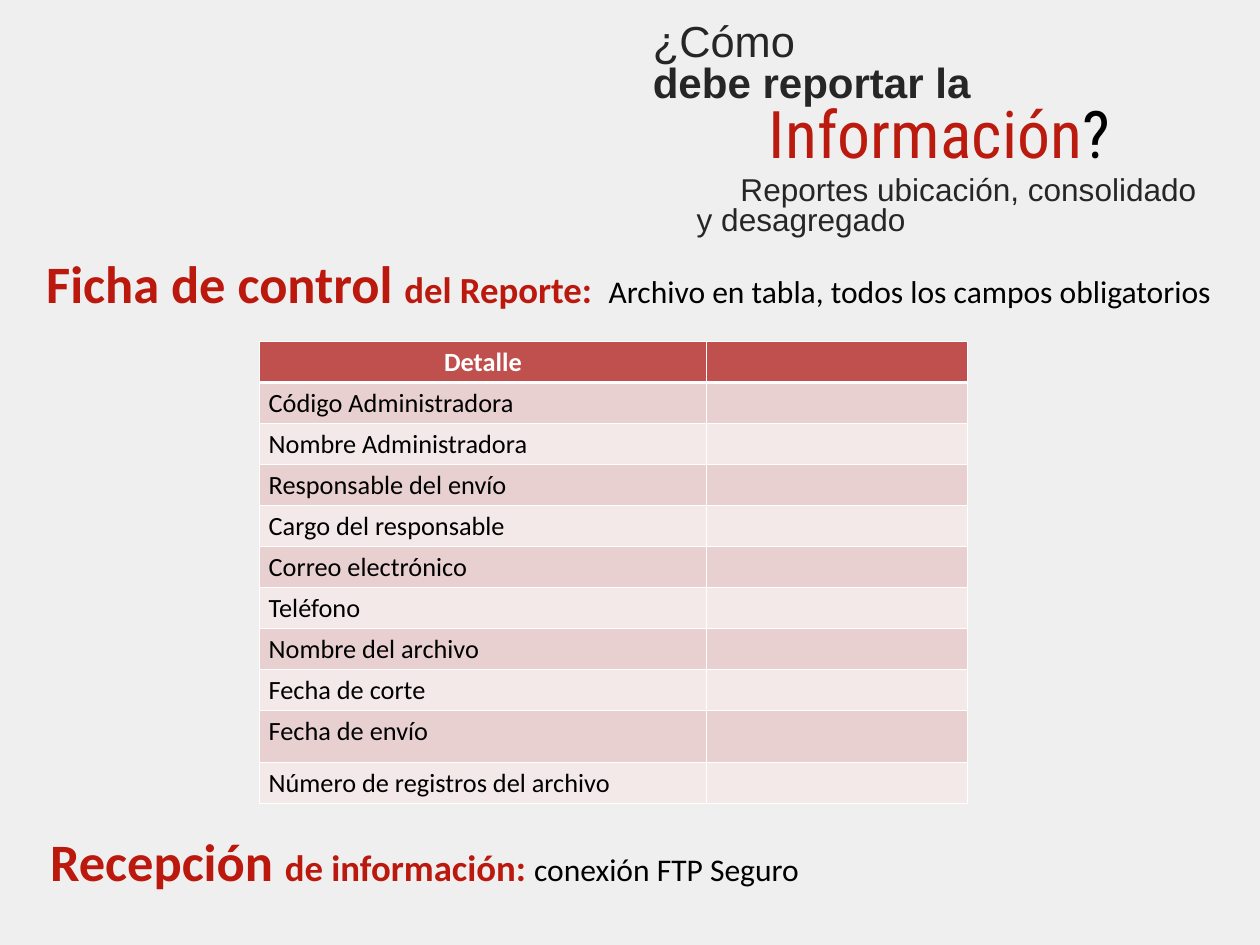
from lxml import etree
from pptx import Presentation
from pptx import util as u
from pptx.dml import color as dml
from pptx.enum import text
from pptx.oxml import ns

RED, BRIGHT_RED, DARK, BLACK, WHITE = "BB190E", "BB1A0E", "262626", "000000", "FFFFFF"
HEADER, BANDS = "C0504D", ("E8D0D0", "F4E9E9")


def rgb(value):
    return dml.RGBColor.from_string(value)


class Page:
    """Holds the body style and the slide being built."""

    font, size, color = "Calibri", 24, BLACK

    def __init__(self, deck, background):
        self.slide = deck.slides.add_slide(deck.slide_layouts[6])
        self.slide.background.fill.solid()
        self.slide.background.fill.fore_color.rgb = rgb(background)

    def span(self, para, words, size=None, color=None, bold=False, font=None):
        span = para.add_run()
        span.text = words
        span.font.size = u.Pt(size or self.size)
        span.font.name = font or self.font
        span.font.bold = bold
        span.font.color.rgb = rgb(color or self.color)

    def box(self, left, top, width, height, insets=(7.2, 3.6)):
        frame = self.slide.shapes.add_textbox(
            u.Pt(left), u.Pt(top), u.Pt(width), u.Pt(height)).text_frame
        frame.word_wrap = True
        frame.margin_left = frame.margin_right = u.Pt(insets[0])
        frame.margin_top = frame.margin_bottom = u.Pt(insets[1])
        return frame

    def title(self, frame, lines):
        for number, (words, size, bold, indent, before) in enumerate(lines):
            para = frame.add_paragraph() if number else frame.paragraphs[0]
            para.line_spacing = 0.8
            para.space_before = u.Pt(before)
            para._p.get_or_add_pPr().set("marL", str(u.Pt(indent)))
            self.span(para, words, size, DARK, bold, "Arial")

    def statement(self, left, top, width, lead, topic, detail):
        para = self.box(left, top, width, 55.4).paragraphs[0]
        self.span(para, lead, 40, RED, True)
        self.span(para, topic, 28, RED, True)
        self.span(para, detail)

    def border(self, cell, side, width):
        line = etree.SubElement(cell._tc.get_or_add_tcPr(), ns.qn(f"a:{side}"),
                                w=str(u.Pt(width)))
        fill = etree.SubElement(line, ns.qn("a:solidFill"))
        etree.SubElement(fill, ns.qn("a:srgbClr"), val=WHITE)

    def table(self, left, top, columns, heights, labels):
        table = self.slide.shapes.add_table(
            len(heights), len(columns), u.Pt(left), u.Pt(top),
            u.Pt(sum(columns)), u.Pt(sum(heights))).table
        for column, width in zip(table.columns, columns):
            column.width = u.Pt(width)
        for number, (row, height, label) in enumerate(zip(table.rows, heights, labels)):
            row.height = u.Pt(height)
            head = number == 0
            for cell in row.cells:
                for side in ("lnL", "lnR", "lnT", "lnB"):
                    thick = (number, side) in ((0, "lnB"), (1, "lnT"))
                    self.border(cell, side, 3 if thick else 1)
                cell.fill.solid()
                cell.fill.fore_color.rgb = rgb(HEADER if head else BANDS[(number - 1) % 2])
            para = row.cells[0].text_frame.paragraphs[0]
            para.alignment = text.PP_ALIGN.CENTER if head else text.PP_ALIGN.LEFT
            self.span(para, label, 20, WHITE if head else BLACK, head)


def main():
    deck = Presentation()
    deck.slide_width, deck.slide_height = u.Pt(959), u.Pt(719.3)
    page = Page(deck, "EFEFEF")

    # Title: words, size, bold, indent, space before
    page.title(page.box(487.5, 13.7, 471, 173.5, (9.4, 5)), [
        ("¿Cómo", 33, False, 0, 0),
        ("debe reportar la", 32, True, 0, 0),
        ("Reportes ubicación, consolidado", 24, False, 66.7, 54),
        ("y desagregado", 24, False, 33.4, 0),
    ])
    keyword = page.box(515.5, 65.5, 338.8, 70.6, (9.4, 5)).paragraphs[0]
    keyword.alignment = text.PP_ALIGN.RIGHT
    page.span(keyword, "Información", 50, BRIGHT_RED, font="Roboto Condensed")
    page.span(keyword, "?", 50, font="Roboto Condensed")

    # Control sheet
    page.statement(28.1, 187.2, 918, "Ficha de control ", "del Reporte:  ",
                   "Archivo en tabla, todos los campos obligatorios")
    labels = ["Detalle", "Código Administradora", "Nombre Administradora",
              "Responsable del envío", "Cargo del responsable", "Correo electrónico",
              "Teléfono", "Nombre del archivo", "Fecha de corte", "Fecha de envío",
              "Número de registros del archivo"]
    heights = [39.6 if label == "Fecha de envío" else 31.2 for label in labels]
    page.table(197.3, 259.9, (340.6, 198.7), heights, labels)

    # Reception
    page.statement(31, 627.1, 861.8, "Recepción ", "de información: ",
                   "conexión FTP Seguro")

    deck.save("out.pptx")


if __name__ == "__main__":
    main()
